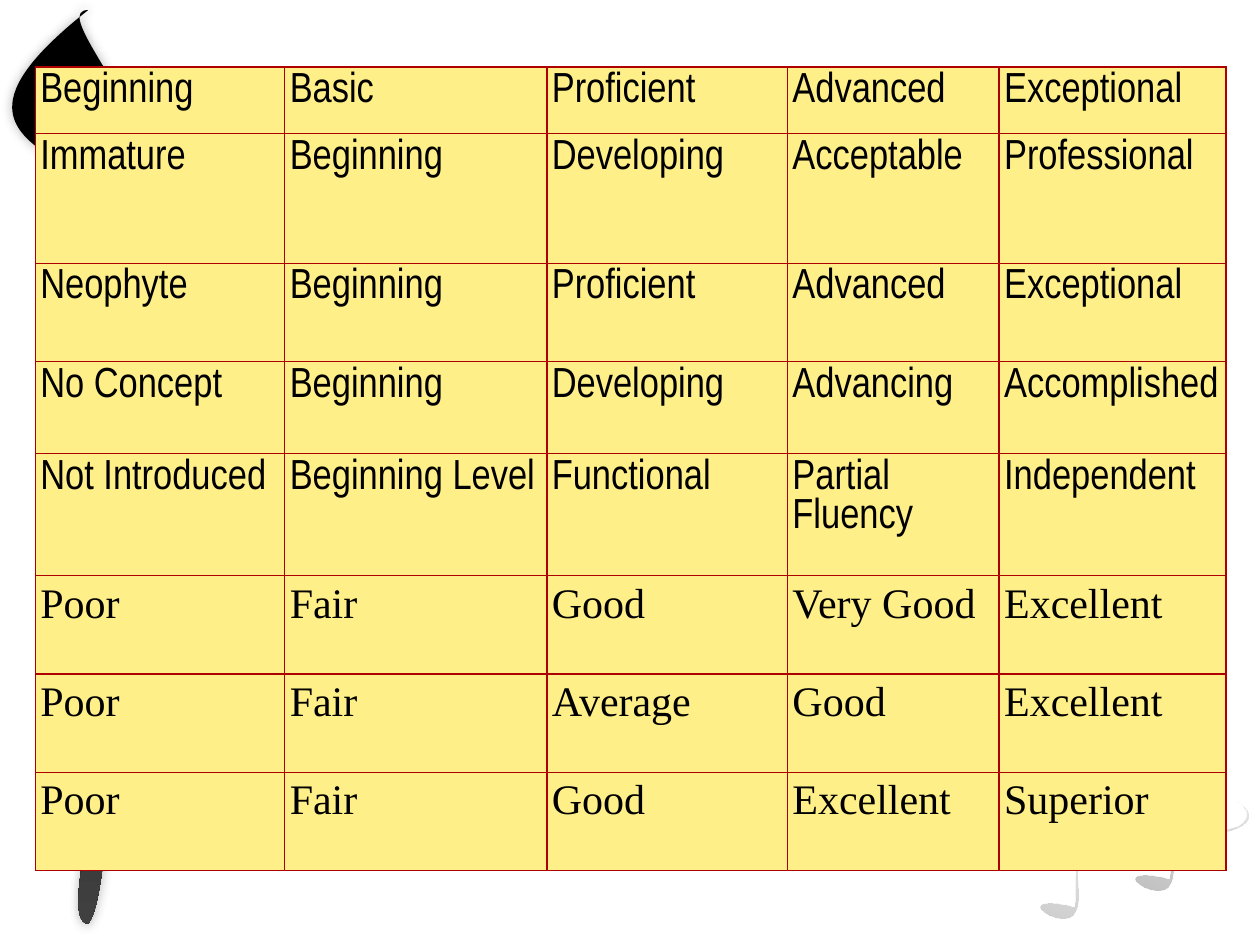
from dataclasses import dataclass
from math import cos, radians, sin

from lxml.etree import SubElement
from pptx import Presentation
from pptx.dml.color import RGBColor as Rgb
from pptx.oxml import parse_xml
from pptx.oxml.ns import nsdecls, qn
from pptx.util import Inches, Pt


@dataclass(frozen=True)
class Theme:
    ink: str = "000000"
    soft_ink: str = "404040"
    cell: str = "FFEF89"
    border: str = "AE0000"
    border_pt: int = 1
    sans: str = "Arial Narrow"
    serif: str = "Times New Roman"
    text_pt: int = 24


THEME = Theme()

# Start point, then three points for each curve, in inches
FEATHER = [
    (2.05, 3.28),
    (2.14, 1.68), (1.64, 2.87), (1.63, 2.87),
    (3.65, 2.07), (1.29, 0), (1.78, 0),
    (0, 1.41), (2.71, 1.03), (2.86, 2.53),
    (3.09, 1.49), (2.34, 2.16), (2.16, 2.95),
    (1.98, 3.73), (2.03, 6.96), (1.78, 7.25),
    (1.29, 7.25), (3.33, 1.99), (2.05, 3.28),
]
# Measured from the centre of the note, as seen once turned
NOTE = [
    (-0.12, 0.23),
    (-0.1, 0.11), (-0.14, -0.21), (-0.05, -0.31),
    (0.25, -0.01), (0.66, -0.22), (0.41, -0.38),
    (0.74, -0.18), (0.13, -0.04), (-0.07, -0.17),
    (-0.13, -0.06), (-0.06, 0.18), (-0.11, 0.26),
    (-0.19, 0.47), (-0.69, 0.09), (-0.12, 0.23),
]
NOTE_TURN = 109.4
# Left, top, and opacity at both ends of the gradient
NOTES = [(8.15, 6.35, 20, 5), (8.63, 5.68, 35, 20), (8.9, 6.13, 25, 10)]
NOTE_SIZE = (1, 1.26)

COLUMN_WIDTHS = [1.98, 2.08, 1.91, 1.68, 1.8]
ROW_HEIGHTS = [0.53, 1.03, 0.78, 0.73, 0.97, 0.78, 0.78, 0.78]
SCALES = [
    ["Beginning", "Basic", "Proficient", "Advanced", "Exceptional"],
    ["Immature", "Beginning", "Developing", "Acceptable", "Professional"],
    ["Neophyte", "Beginning", "Proficient", "Advanced", "Exceptional"],
    ["No Concept", "Beginning", "Developing", "Advancing", "Accomplished"],
    ["Not Introduced", "Beginning Level", "Functional", "Partial Fluency", "Independent"],
    ["Poor", "Fair", "Good", "Very Good", "Excellent"],
    ["Poor", "Fair", "Average", "Good", "Excellent"],
    ["Poor", "Fair", "Good", "Excellent", "Superior"],
]
SANS_ROWS = 5


def add_curved_shape(shapes, left, top, points):
    """Draw a closed outline of cubic curves, offset by left and top."""
    corners = [(Inches(left + x), Inches(top + y)) for x, y in points]
    builder = shapes.build_freeform(*corners[0], scale=1.0)
    builder.add_line_segments(corners[1:], close=True)
    outline = builder.convert_to_shape()
    segments = list(outline.element.iter(qn("a:lnTo")))
    for first in range(0, len(segments), 3):
        curve = segments[first]
        for extra in segments[first + 1:first + 3]:
            curve.append(extra[0])
            extra.getparent().remove(extra)
        curve.tag = qn("a:cubicBezTo")
    outline.line.fill.background()
    outline.shadow.inherit = False
    return outline


def set_gradient(outline, angle, stops):
    """Fill with two stops, each a position, a colour and an opacity in percent."""
    outline.fill.gradient()
    outline.fill.gradient_angle = angle
    for stop, (position, color, opacity) in zip(outline.fill.gradient_stops, stops):
        stop.position = position
        stop.color.rgb = Rgb.from_string(color)
    colors = outline.element.spPr.find(qn("a:gradFill")).iter(qn("a:srgbClr"))
    for color, (_, _, opacity) in zip(colors, stops):
        if opacity < 100:
            SubElement(color, qn("a:alpha"), val=str(opacity * 1000))


def add_feather(slide, left, top):
    feather = add_curved_shape(slide.shapes, left, top, FEATHER)
    set_gradient(feather, 270, [(0.25, THEME.ink, 100), (1, THEME.soft_ink, 100)])
    effects = feather.element.spPr.find(qn("a:effectLst"))
    effects.append(parse_xml(
        f'<a:outerShdw {nsdecls("a")} blurRad="{Pt(6)}" dist="0" dir="0" rotWithShape="0">'
        f'<a:srgbClr val="{THEME.soft_ink}"><a:alpha val="40000"/></a:srgbClr></a:outerShdw>'))


def add_note(shapes, left, top, width, height, start_opacity, end_opacity):
    turn = radians(NOTE_TURN)
    upright = [(x * cos(turn) + y * sin(turn), y * cos(turn) - x * sin(turn))
               for x, y in NOTE]
    note = add_curved_shape(shapes, left + width / 2, top + height / 2, upright)
    note.rotation = NOTE_TURN
    set_gradient(note, 180, [(0, THEME.ink, start_opacity), (1, THEME.ink, end_opacity)])


def add_notes(slide):
    group = slide.shapes.add_group_shape()
    for left, top, start_opacity, end_opacity in NOTES:
        add_note(group.shapes, left, top, *NOTE_SIZE, start_opacity, end_opacity)


def write_text(frame, text, font, size=THEME.text_pt, color=THEME.ink):
    run = frame.paragraphs[0].add_run()
    run.text = text
    run.font.name = font
    run.font.size = Pt(size)
    run.font.color.rgb = Rgb.from_string(color)


def style_cell(cell):
    cell.margin_left = cell.margin_right = Inches(0.04)
    cell.margin_top = cell.margin_bottom = Inches(0.04)
    cell.fill.solid()
    cell.fill.fore_color.rgb = Rgb.from_string(THEME.cell)
    properties = cell._tc.get_or_add_tcPr()
    for index, side in enumerate("LRTB"):
        properties.insert(index, parse_xml(
            f'<a:ln{side} {nsdecls("a")} w="{Pt(THEME.border_pt)}"><a:solidFill>'
            f'<a:srgbClr val="{THEME.border}"/></a:solidFill></a:ln{side}>'))


def add_scale_table(slide, left, top, width, height):
    table = slide.shapes.add_table(
        len(SCALES), len(COLUMN_WIDTHS),
        Inches(left), Inches(top), Inches(width), Inches(height)).table
    table.first_row = table.horz_banding = False
    for column, share in zip(table.columns, COLUMN_WIDTHS):
        column.width = Inches(width * share / sum(COLUMN_WIDTHS))
    for row, share in zip(table.rows, ROW_HEIGHTS):
        row.height = Inches(height * share / sum(ROW_HEIGHTS))
    for row_index, levels in enumerate(SCALES):
        font = THEME.sans if row_index < SANS_ROWS else THEME.serif
        for column_index, level in enumerate(levels):
            cell = table.cell(row_index, column_index)
            style_cell(cell)
            write_text(cell.text_frame, level, font=font)


def main():
    deck = Presentation()
    deck.slide_width, deck.slide_height = Inches(10), Inches(7.5)
    slide = deck.slides.add_slide(deck.slide_layouts[6])
    add_feather(slide, -1.08, 0.08)
    add_notes(slide)
    add_scale_table(slide, 0.28, 0.53, 9.45, 6.38)
    deck.save("out.pptx")


if __name__ == "__main__":
    main()
